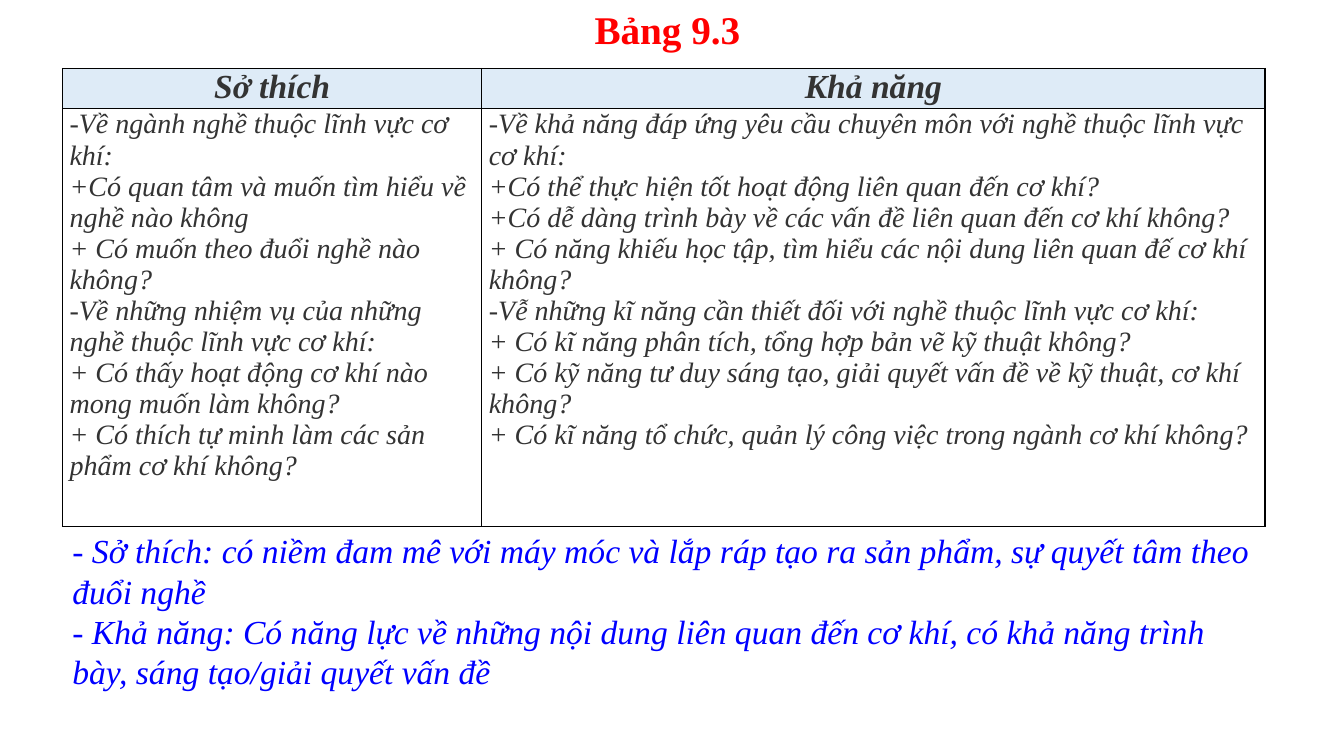
from lxml import etree
from pptx import Presentation
from pptx.dml.color import RGBColor
from pptx.enum.text import MSO_AUTO_SIZE, PP_ALIGN
from pptx.oxml.ns import qn
from pptx.util import Emu, Pt

CENTER = PP_ALIGN.CENTER
LEFT = PP_ALIGN.LEFT
GROW = MSO_AUTO_SIZE.SHAPE_TO_FIT_TEXT
FONT = "Times New Roman"
EMU_PER_PX = 9144

HEADERS = ["Sở thích", "Khả năng"]
INTERESTS = [
    "-Về ngành nghề thuộc lĩnh vực cơ khí:",
    "+Có quan tâm và muốn tìm hiểu về nghề nào không",
    "+ Có muốn theo đuổi nghề nào không?",
    "-Về những nhiệm vụ của những nghề thuộc lĩnh vực cơ khí:",
    "+ Có thấy hoạt động cơ khí nào mong muốn làm không?",
    "+ Có thích tự minh làm các sản phẩm cơ khí không?",
]
ABILITIES = [
    "-Về khả năng đáp ứng yêu cầu chuyên môn với nghề thuộc lĩnh vực cơ khí:",
    "+Có thể thực hiện tốt hoạt động liên quan đến cơ khí?",
    "+Có dễ dàng trình bày về các vấn đề liên quan đến cơ khí không?",
    "+ Có năng khiếu học tập, tìm hiểu các nội dung liên quan đế cơ khí không?",
    "-Vễ những kĩ năng cần thiết đối với nghề thuộc lĩnh vực cơ khí:",
    "+ Có kĩ năng phân tích, tổng hợp bản vẽ kỹ thuật không?",
    "+ Có kỹ năng tư duy sáng tạo, giải quyết vấn đề về kỹ thuật, cơ khí không?",
    "+ Có kĩ năng tổ chức, quản lý công việc trong ngành cơ khí không?",
]
SUMMARY = [
    "- Sở thích: có niềm đam mê với máy móc và lắp ráp tạo ra sản phẩm, "
    "sự quyết tâm theo đuổi nghề",
    "- Khả năng: Có năng lực về những nội dung liên quan đến cơ khí, "
    "có khả năng trình bày, sáng tạo/giải quyết vấn đề",
]


def px(n):
    return Emu(n * EMU_PER_PX)


def rgb(color):
    return RGBColor.from_string(color)


def write(tf, lines, size, color, bold=False, italic=False, align=LEFT):
    tf.word_wrap = True
    for i, line in enumerate(lines):
        p = tf.paragraphs[0] if i == 0 else tf.add_paragraph()
        p.alignment = align
        r = p.add_run()
        r.text = line
        r.font.name = FONT
        r.font.size = Pt(size)
        r.font.bold = bold
        r.font.italic = italic
        r.font.color.rgb = rgb(color)


def add_text(s, x, y, w, h, lines, size, color, **style):
    tf = s.shapes.add_textbox(px(x), px(y), px(w), px(h)).text_frame
    write(tf, lines, size, color, **style)
    tf.auto_size = GROW


def set_borders(cell, color, width):
    tcPr = cell._tc.get_or_add_tcPr()
    for i, side in enumerate(("a:lnL", "a:lnR", "a:lnT", "a:lnB")):
        ln = etree.Element(qn(side), w=str(Pt(width)))
        fill = etree.SubElement(ln, qn("a:solidFill"))
        etree.SubElement(fill, qn("a:srgbClr"), val=color)
        tcPr.insert(i, ln)


def fill_cell(cell, lines, size, fill=None, **style):
    cell.margin_left = cell.margin_right = px(7)
    cell.margin_top = cell.margin_bottom = px(0)
    write(cell.text_frame, lines, size, "333333", italic=True, **style)
    if fill:
        cell.fill.solid()
        cell.fill.fore_color.rgb = rgb(fill)
    else:
        cell.fill.background()
    set_borders(cell, "000000", 1)


def add_comparison(s, x, y, col_widths, row_heights):
    table = s.shapes.add_table(
        len(row_heights), len(col_widths), px(x), px(y),
        px(sum(col_widths)), px(sum(row_heights))).table
    for col, w in zip(table.columns, col_widths):
        col.width = px(w)
    for row, h in zip(table.rows, row_heights):
        row.height = px(h)
    for c, (header, lines) in enumerate(zip(HEADERS, (INTERESTS, ABILITIES))):
        fill_cell(table.cell(0, c), [header], 24, "DEEBF7", bold=True, align=CENTER)
        fill_cell(table.cell(1, c), lines, 20)


def main():
    prs = Presentation()
    prs.slide_width, prs.slide_height = Emu(12192000), px(750)
    s = prs.slides.add_slide(prs.slide_layouts[6])
    add_text(s, 580, 0, 227, 57, ["Bảng 9.3"], 28, "FF0000", bold=True)
    add_comparison(s, 62, 68, [416, 777], [38, 414])
    add_text(s, 62, 521, 1193, 172, SUMMARY, 24, "0000FF", italic=True)
    prs.save("out.pptx")


if __name__ == "__main__":
    main()
